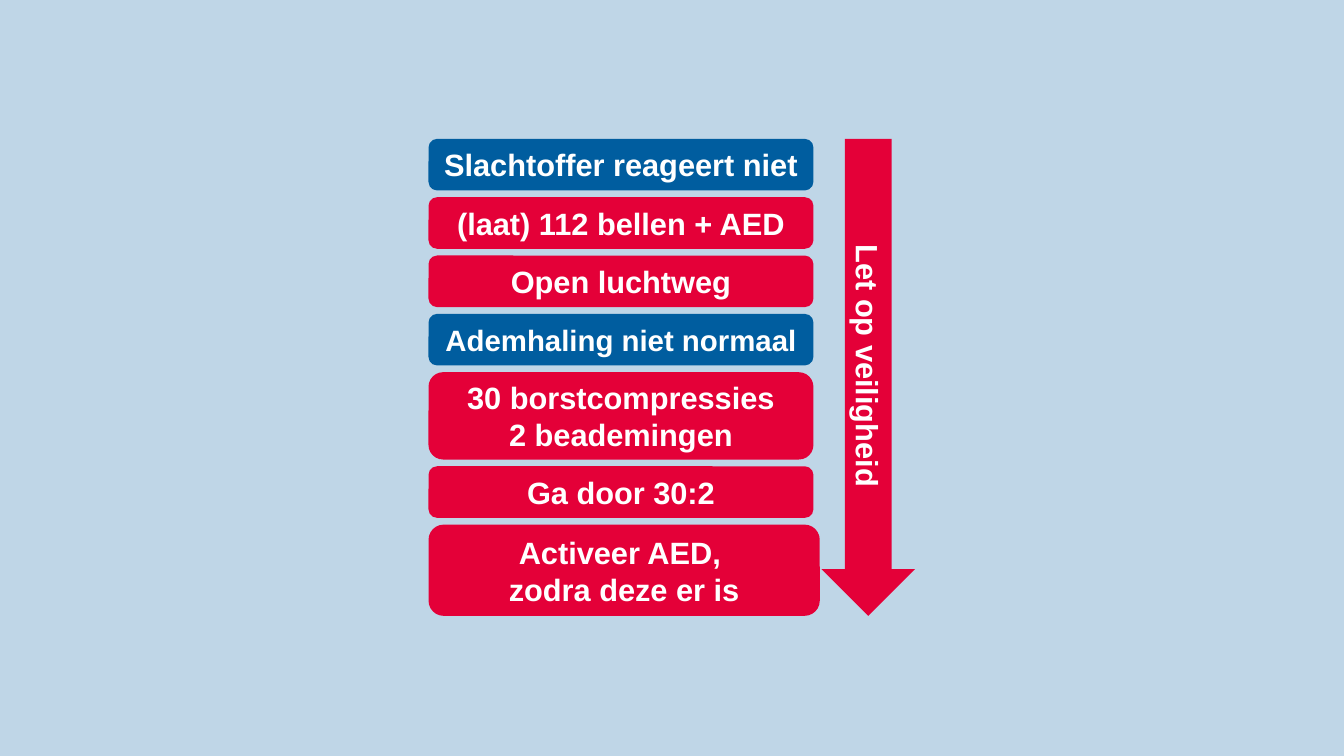
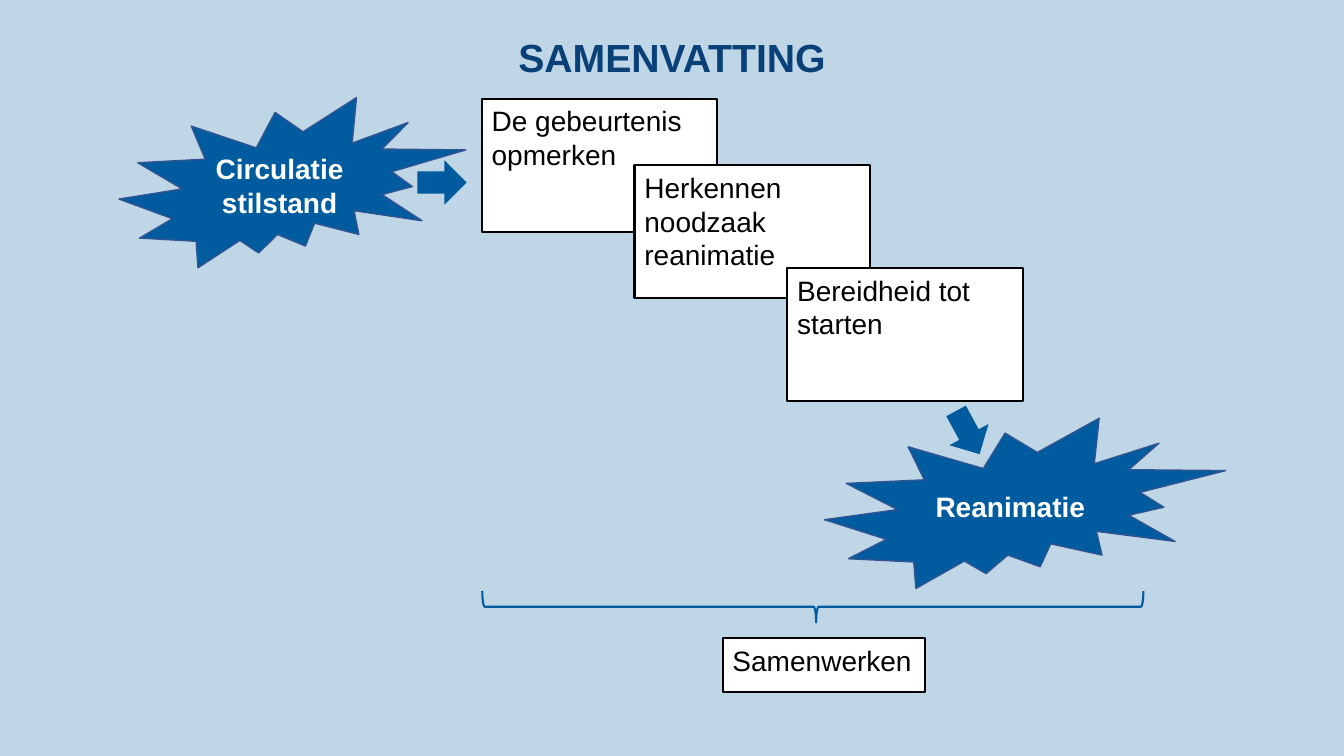
from dataclasses import dataclass

from pptx import Presentation
from pptx.dml.color import RGBColor
from pptx.enum.shapes import MSO_SHAPE
from pptx.enum.text import MSO_ANCHOR, PP_ALIGN
from pptx.oxml.ns import qn
from pptx.util import Cm, Pt

ROUNDED = MSO_SHAPE.ROUNDED_RECTANGLE
RECT = MSO_SHAPE.RECTANGLE
SEAL = MSO_SHAPE.EXPLOSION2
RIGHT_ARROW = MSO_SHAPE.RIGHT_ARROW
DOWN_ARROW = MSO_SHAPE.DOWN_ARROW
BRACE = MSO_SHAPE.LEFT_BRACE
TOP, MIDDLE = MSO_ANCHOR.TOP, MSO_ANCHOR.MIDDLE
LEFT, CENTER = PP_ALIGN.LEFT, PP_ALIGN.CENTER

FONT = "Arial"
COLORS = {
    "background": "BFD6E7",
    "title": "084077",
    "red": "E40038",
    "step_blue": "005D9F",
    "blue": "005C9F",
    "seal_line": "325491",
    "white": "FFFFFF",
    "black": "000000",
}


@dataclass(frozen=True)
class Box:
    """Position and size in centimetres."""
    left: float
    top: float
    width: float
    height: float

    def lengths(self) -> tuple[Cm, Cm, Cm, Cm]:
        return Cm(self.left), Cm(self.top), Cm(self.width), Cm(self.height)


@dataclass(frozen=True)
class Style:
    fill: str | None = None
    line: str | None = None
    line_pt: float = 1.5
    color: str = "white"
    bold: bool = True
    align: PP_ALIGN = CENTER
    anchor: MSO_ANCHOR = MIDDLE


@dataclass(frozen=True)
class Step:
    lines: tuple[str, ...]
    color: str = "red"
    size: float = 22
    width: float = 9.7
    height: float = 1.3


TITLE = Style(color="title", anchor=TOP)
SEAL_STYLE = Style(fill="blue", line="seal_line", line_pt=1)
ARROW_STYLE = Style(fill="blue")
BRACE_STYLE = Style(line="blue")
CARD = Style(fill="white", line="black", color="black", bold=False,
             align=LEFT, anchor=TOP)

STEP_LEFT, STEP_TOP, STEP_GAP = 10.8, 3.5, 0.17
STEPS = (
    Step(("Slachtoffer reageert niet",), "step_blue"),
    Step(("(laat) 112 bellen + AED",)),
    Step(("Open luchtweg",)),
    Step(("Ademhaling niet normaal",), "step_blue", size=21),
    Step(("30 borstcompressies", "2 beademingen"), height=2.2),
    Step(("Ga door 30:2",)),
    Step(("Activeer AED, ", "zodra deze er is"), width=9.86, height=2.3),
)

CARD_LEFT, CARD_STEP, CARD_WIDTH, CARD_HEIGHT = 12.14, 3.85, 5.94, 3.35
CARDS = (
    ("De gebeurtenis opmerken", 2.49),
    ("Herkennen noodzaak reanimatie", 4.17),
    ("Bereidheid tot starten", 6.76),
)


def rgb(name: str) -> RGBColor:
    return RGBColor.from_string(COLORS[name])


def write_text(sp, lines: tuple[str, ...], size: float, style: Style) -> None:
    tf = sp.text_frame
    tf.word_wrap = True
    tf.vertical_anchor = style.anchor
    for i, line in enumerate(lines):
        p = tf.add_paragraph() if i else tf.paragraphs[0]
        p.alignment = style.align
        r = p.add_run()
        r.text = line
        r.font.name = FONT
        r.font.size = Pt(size)
        r.font.bold = style.bold
        r.font.color.rgb = rgb(style.color)


def add_shape(s, kind: MSO_SHAPE, box: Box, style: Style,
              lines: tuple[str, ...] = (), size: float = 20,
              rotation: float = 0):
    sp = s.shapes.add_shape(kind, *box.lengths())
    sp.shadow.inherit = False
    sp.rotation = rotation
    if style.fill:
        sp.fill.solid()
        sp.fill.fore_color.rgb = rgb(style.fill)
    else:
        sp.fill.background()
    if style.line:
        sp.line.color.rgb = rgb(style.line)
        sp.line.width = Pt(style.line_pt)
    else:
        sp.line.fill.background()
    if lines:
        write_text(sp, lines, size, style)
    return sp


def add_slide(prs):
    """Add a blank slide with the shared background."""
    s = prs.slides.add_slide(prs.slide_layouts[6])
    s.background.fill.solid()
    s.background.fill.fore_color.rgb = rgb("background")
    return s


def add_title(s, text: str) -> None:
    sp = s.shapes.add_textbox(*Box(6.71, 0.71, 20.45, 1.45).lengths())
    write_text(sp, (text,), 28, TITLE)


def build_steps_slide(prs) -> None:
    s = add_slide(prs)
    top = STEP_TOP
    for step in STEPS:
        box = Box(STEP_LEFT, top, step.width, step.height)
        add_shape(s, ROUNDED, box, Style(fill=step.color), step.lines, step.size)
        top += step.height + STEP_GAP
    arrow_box = Box(20.7, STEP_TOP, 2.36, top - STEP_GAP - STEP_TOP)
    arrow = add_shape(s, DOWN_ARROW, arrow_box, Style(fill="red"),
                      ("Let op veiligheid",), 22)
    arrow.text_frame._txBody.find(qn("a:bodyPr")).set("vert", "vert")


def build_summary_slide(prs) -> None:
    s = add_slide(prs)
    add_title(s, "SAMENVATTING")
    add_shape(s, SEAL, Box(3, 2.46, 8.74, 4.29), SEAL_STYLE,
              ("Circulatie stilstand",))
    add_shape(s, RIGHT_ARROW, Box(10.52, 4.04, 1.24, 1.12), ARROW_STYLE)
    for i, (text, top) in enumerate(CARDS):
        box = Box(CARD_LEFT + i * CARD_STEP, top, CARD_WIDTH, CARD_HEIGHT)
        add_shape(s, RECT, box, CARD, (text,))
    add_shape(s, RIGHT_ARROW, Box(23.77, 10.34, 1.24, 1.12), ARROW_STYLE,
              rotation=61.5)
    add_shape(s, SEAL, Box(20.78, 10.54, 10.11, 4.29), SEAL_STYLE,
              ("Reanimatie",))
    brace = add_shape(s, BRACE, Box(20.09, 6.96, 0.79, 16.66), BRACE_STYLE,
                      rotation=270)
    brace.adjustments[0] = 0.08
    brace.adjustments[1] = 0.505
    add_shape(s, RECT, Box(18.21, 16.08, 5.11, 1.37), CARD, ("Samenwerken",))


def main() -> None:
    prs = Presentation()
    prs.slide_width, prs.slide_height = Cm(33.87), Cm(19.05)
    build_steps_slide(prs)
    build_summary_slide(prs)
    prs.save("out.pptx")


if __name__ == "__main__":
    main()
